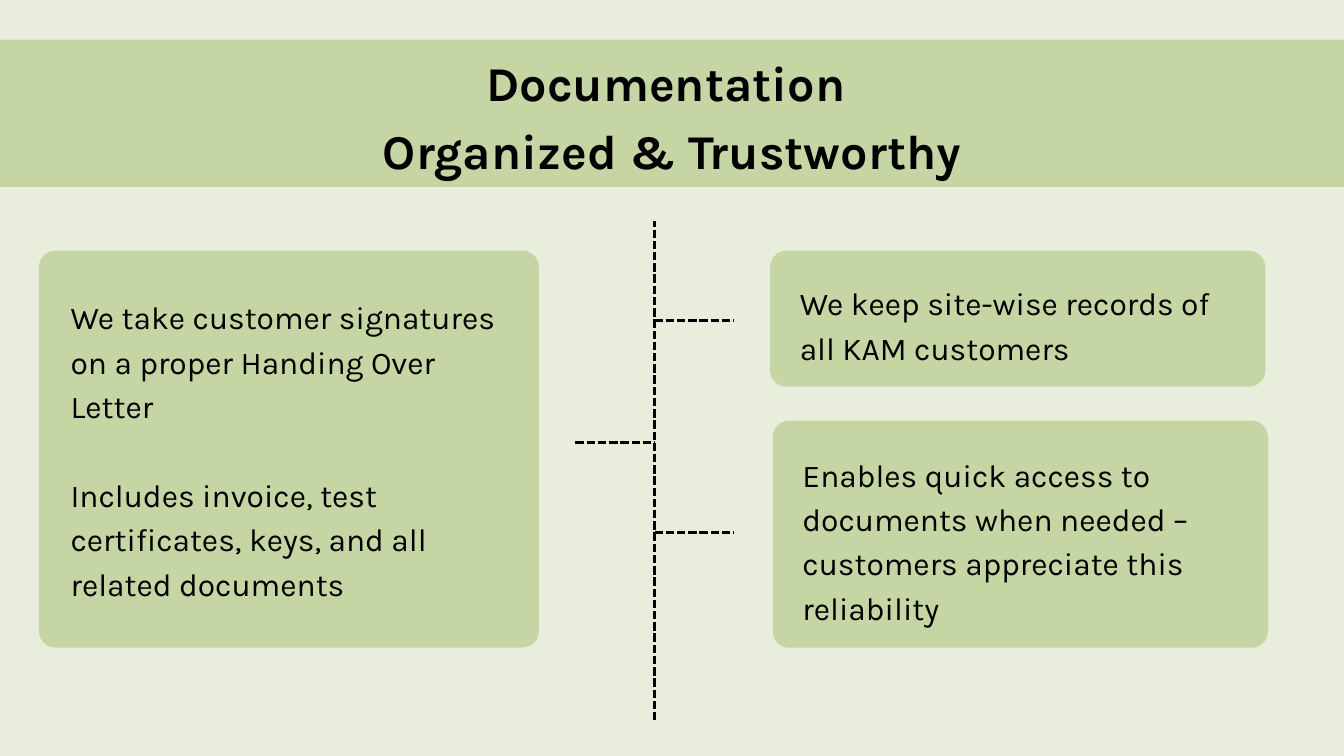
from dataclasses import dataclass

import pptx
import pptx.dml.color
import pptx.enum.dml
import pptx.enum.shapes
import pptx.enum.text
import pptx.oxml
import pptx.oxml.ns
import pptx.util

SLIDE_W = pptx.util.Inches(20)
SLIDE_H = pptx.util.Inches(11.25)
CORNER = pptx.util.Inches(0.245)
FONT = "Karla"
PALE = pptx.dml.color.RGBColor(0xE8, 0xEE, 0xDB)
SAGE = pptx.dml.color.RGBColor(0xC5, 0xD5, 0xA4)
BLACK = pptx.dml.color.RGBColor(0, 0, 0)
LINE_HEIGHT = 1.4
TITLE_SIZE = 52
BODY_SIZE = 34


@dataclass(frozen=True)
class Card:
    left: float
    top: float
    width: float
    height: float
    inset_x: float
    inset_y: float
    texts: tuple[str, ...]


@dataclass(frozen=True)
class Rule:
    x1: float
    y1: float
    x2: float
    y2: float


TITLE = Card(0, 5.24, 100, 19.5, 2.1, 0.53, ("Documentation ", "Organized & Trustworthy"))

CARDS = (
    Card(2.9, 33.16, 37.2, 52.5, 2, 4.8, (
        "We take customer signatures on a proper Handing Over Letter",
        "Includes invoice, test certificates, keys, and all related documents",
    )),
    Card(57.3, 33.16, 36.85, 18, 1.85, 2.93, (
        "We keep site-wise records of all KAM customers",
    )),
    Card(57.5, 55.64, 36.85, 30.04, 1.85, 3.11, (
        "Enables quick access to documents when needed – customers appreciate this reliability",
    )),
)

SPINE_X = 48.7
BRANCH = 5.88
RULES = (
    Rule(SPINE_X, 95.29, SPINE_X, 29.24),
    Rule(SPINE_X, 42.4, SPINE_X + BRANCH, 42.4),
    Rule(SPINE_X, 70.49, SPINE_X + BRANCH, 70.49),
    Rule(SPINE_X - BRANCH, 58.58, SPINE_X, 58.58),
)


def across(percent: float) -> int:
    return round(SLIDE_W * percent / 100)


def down(percent: float) -> int:
    return round(SLIDE_H * percent / 100)


def fill_card(sp, card: Card, size: int, bold: bool, align, gap: float) -> None:
    sp.fill.solid()
    sp.fill.fore_color.rgb = SAGE
    sp.line.fill.background()
    tf = sp.text_frame
    tf.word_wrap = True
    tf.auto_size = pptx.enum.text.MSO_AUTO_SIZE.NONE
    tf.vertical_anchor = pptx.enum.text.MSO_ANCHOR.TOP
    tf.margin_left = tf.margin_right = across(card.inset_x)
    tf.margin_top = down(card.inset_y)
    tf.margin_bottom = 0
    for i, text in enumerate(card.texts):
        p = tf.add_paragraph() if i else tf.paragraphs[0]
        p.text = text
        p.alignment = align
        p.line_spacing = pptx.util.Pt(size * LINE_HEIGHT)
        p.space_before = pptx.util.Pt(gap if i else 0)
        p.font.name = FONT
        p.font.size = pptx.util.Pt(size)
        p.font.bold = bold
        p.font.color.rgb = BLACK


def place_title(s, card: Card) -> None:
    sp = s.shapes.title
    sp.left, sp.top = across(card.left), down(card.top)
    sp.width, sp.height = across(card.width), down(card.height)
    fill_card(sp, card, TITLE_SIZE, True, pptx.enum.text.PP_ALIGN.CENTER, 0)


def draw_card(s, card: Card) -> None:
    sp = s.shapes.add_shape(
        pptx.enum.shapes.MSO_SHAPE.ROUNDED_RECTANGLE,
        across(card.left), down(card.top), across(card.width), down(card.height),
    )
    sp.shadow.inherit = False
    sp.adjustments[0] = CORNER / min(sp.width, sp.height)
    fill_card(sp, card, BODY_SIZE, False, pptx.enum.text.PP_ALIGN.LEFT,
              BODY_SIZE * LINE_HEIGHT)


def draw_rule(s, rule: Rule) -> None:
    cxn = s.shapes.add_connector(
        pptx.enum.shapes.MSO_CONNECTOR.STRAIGHT,
        across(rule.x1), down(rule.y1), across(rule.x2), down(rule.y2),
    )
    cxn.line.color.rgb = BLACK
    cxn.line.width = pptx.util.Pt(3)
    cxn.line.dash_style = pptx.enum.dml.MSO_LINE.SQUARE_DOT
    sp_pr = cxn._element.spPr
    sp_pr.append(pptx.oxml.parse_xml(f"<a:effectLst {pptx.oxml.ns.nsdecls('a')}/>"))


def main() -> None:
    prs = pptx.Presentation()
    prs.slide_width, prs.slide_height = SLIDE_W, SLIDE_H
    s = prs.slides.add_slide(prs.slide_layouts.get_by_name("Title Only"))
    s.background.fill.solid()
    s.background.fill.fore_color.rgb = PALE
    place_title(s, TITLE)
    for card in CARDS:
        draw_card(s, card)
    for rule in RULES:
        draw_rule(s, rule)
    prs.save("out.pptx")


if __name__ == "__main__":
    main()
